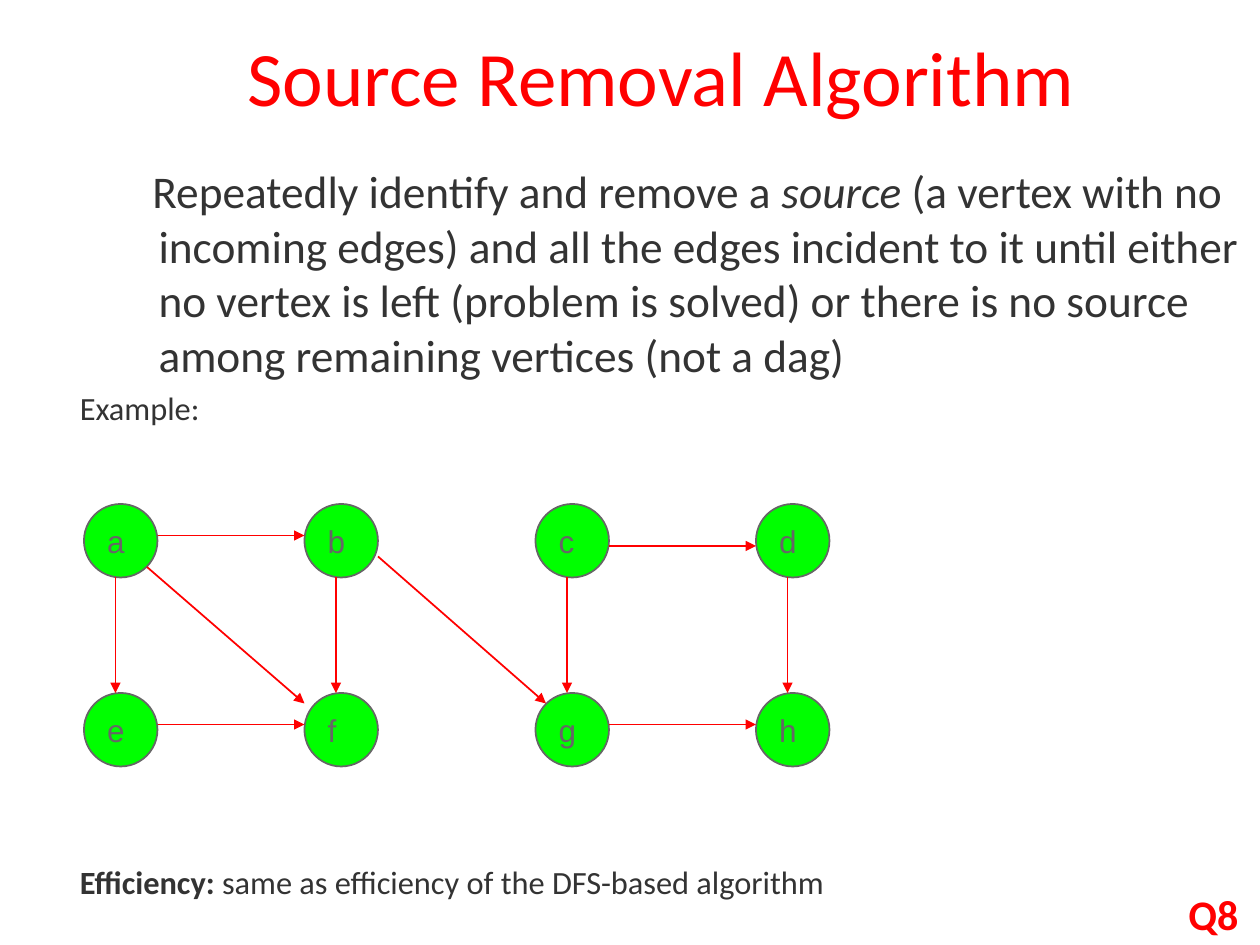
from typing import NamedTuple

from lxml import etree
from pptx import Presentation
from pptx.dml.color import RGBColor
from pptx.enum.shapes import MSO_CONNECTOR, MSO_SHAPE
from pptx.enum.text import MSO_ANCHOR, PP_ALIGN
from pptx.oxml.ns import qn
from pptx.util import Pt

STRAIGHT = MSO_CONNECTOR.STRAIGHT
OVAL = MSO_SHAPE.OVAL
MIDDLE = MSO_ANCHOR.MIDDLE
LEFT_ALIGNED, CENTERED = PP_ALIGN.LEFT, PP_ALIGN.CENTER

COLORS = {"red": "FF0000", "text": "333333", "green": "00FF00", "gray": "666666"}

DIAMETER = 42
COLUMNS = (48, 174, 306, 432)
ROWS = {288: "abcd", 396: "efgh"}
VERTICES = {
    name: (left, top)
    for top, names in ROWS.items()
    for left, name in zip(COLUMNS, names)
}

# Where edges meet a vertex, measured from its top left corner
RIGHT_SIDE, LEFT_SIDE = (DIAMETER, 18), (0, 18)
BOTTOM_SIDE, TOP_SIDE = (18, DIAMETER), (18, 0)


class Edge(NamedTuple):
    source: str
    target: str
    start: tuple[int, int]
    end: tuple[int, int]


class TextRun(NamedTuple):
    text: str
    size: float
    color: str = "text"
    bold: bool = False
    italic: bool = False


EDGES = [
    *(Edge(*pair, RIGHT_SIDE, LEFT_SIDE) for pair in ("ab", "ef", "gh")),
    *(Edge(*pair, BOTTOM_SIDE, TOP_SIDE) for pair in ("ae", "bf", "cg", "dh")),
    Edge("c", "d", (DIAMETER, 24), (0, 24)),
    Edge("a", "f", (36, 36), (0, 6)),
    Edge("b", "g", (DIAMETER, 30), (6, 6)),
]

DESCRIPTION = [
    TextRun("Repeatedly identify and remove a ", 25.9),
    TextRun("source", 25.9, italic=True),
    TextRun(
        " (a vertex with no incoming edges) and all the edges incident to it "
        "until either no vertex is left (problem is solved) or there is no "
        "source among remaining vertices (not a dag)",
        25.9,
    ),
]
EFFICIENCY = [
    TextRun("Efficiency:", 18.5, bold=True),
    TextRun(" same as efficiency of the DFS-based algorithm", 18.5),
]


def rgb(name: str) -> RGBColor:
    return RGBColor.from_string(COLORS[name])


def format_font(font, size: float, color: str, name: str = "Calibri") -> None:
    font.name = name
    font.size = Pt(size)
    font.color.rgb = rgb(color)


def add_runs(paragraph, text_runs: list[TextRun]) -> None:
    for text_run in text_runs:
        run = paragraph.add_run()
        run.text = text_run.text
        format_font(run.font, text_run.size, text_run.color)
        run.font.bold = text_run.bold
        run.font.italic = text_run.italic


def add_text_box(slide, left: float, top: float, width: float, height: float,
                 text_runs: list[TextRun], insets=(3.6, 3.6, 1.44, 1.44)):
    """Add a wrapped text box with one paragraph and return its text frame."""
    shape = slide.shapes.add_textbox(Pt(left), Pt(top), Pt(width), Pt(height))
    frame = shape.text_frame
    frame.word_wrap = True
    frame.margin_left, frame.margin_top, frame.margin_right, frame.margin_bottom = map(Pt, insets)
    add_runs(frame.paragraphs[0], text_runs)
    return frame


def add_title(slide) -> None:
    title = slide.shapes.title
    title.left, title.top, title.width, title.height = Pt(48), Pt(16), Pt(660), Pt(54)
    frame = title.text_frame
    frame.text = "Source Removal Algorithm"
    frame.vertical_anchor = MIDDLE
    paragraph = frame.paragraphs[0]
    paragraph.alignment = CENTERED
    format_font(paragraph.runs[0].font, 44, "red")


def add_description(slide) -> None:
    frame = add_text_box(slide, 42, 90, 678, 160, DESCRIPTION)
    properties = frame.paragraphs[0]._p.get_or_add_pPr()
    properties.set("marL", str(Pt(45)))
    properties.set("indent", str(Pt(-3.5)))
    example = frame.add_paragraph()
    example.space_before = Pt(4)
    add_runs(example, [TextRun("Example:", 18.5)])


def add_vertex(slide, name: str, left: float, top: float) -> None:
    shape = slide.shapes.add_shape(OVAL, Pt(left), Pt(top), Pt(DIAMETER), Pt(DIAMETER))
    shape.shadow.inherit = False
    shape.fill.solid()
    shape.fill.fore_color.rgb = rgb("green")
    shape.line.color.rgb = rgb("gray")
    shape.line.width = Pt(1)
    frame = shape.text_frame
    frame.text = name
    frame.word_wrap = False
    frame.vertical_anchor = MIDDLE
    paragraph = frame.paragraphs[0]
    paragraph.alignment = LEFT_ALIGNED
    format_font(paragraph.runs[0].font, 18, "gray", "Arial")


def add_edge(slide, edge: Edge) -> None:
    source, target = VERTICES[edge.source], VERTICES[edge.target]
    connector = slide.shapes.add_connector(
        STRAIGHT,
        Pt(source[0] + edge.start[0]), Pt(source[1] + edge.start[1]),
        Pt(target[0] + edge.end[0]), Pt(target[1] + edge.end[1]),
    )
    connector.line.color.rgb = rgb("red")
    connector.line.width = Pt(1)
    properties = connector._element.spPr
    etree.SubElement(properties.find(qn("a:ln")), qn("a:tailEnd"), type="triangle")
    etree.SubElement(properties, qn("a:effectLst"))


def main() -> None:
    presentation = Presentation()
    presentation.slide_width, presentation.slide_height = Pt(720), Pt(540)
    slide = presentation.slides.add_slide(presentation.slide_layouts[5])
    add_title(slide)
    add_description(slide)
    for name, (left, top) in VERTICES.items():
        add_vertex(slide, name, left, top)
    for edge in EDGES:
        add_edge(slide, edge)
    add_text_box(slide, 42, 489, 600, 30, EFFICIENCY)
    add_text_box(slide, 672, 504, 48, 36, [TextRun("Q8", 24, "red", bold=True)],
                 insets=(7.2, 3.6, 7.2, 3.6))
    presentation.save("out.pptx")


if __name__ == "__main__":
    main()
